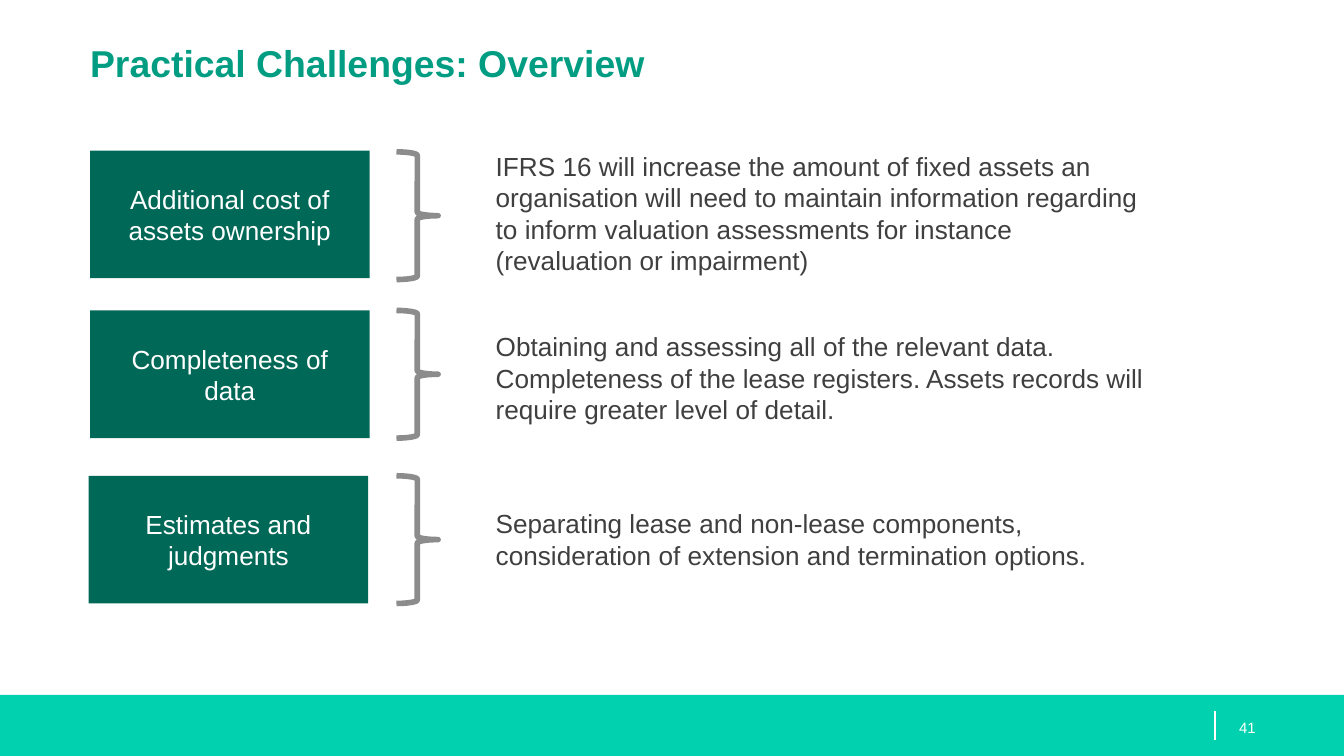
"""Build the slide on practical challenges of lease accounting."""
from lxml import etree
from pptx import Presentation
from pptx.dml.color import RGBColor
from pptx.enum import shapes as sh, text as tx
from pptx.oxml.ns import qn
from pptx.util import Inches, Pt

TITLE = "Practical Challenges: Overview"
PAGE = "41"
ROWS = [
    {"label": "Additional cost of assets ownership",
     "body": "IFRS 16 will increase the amount of fixed assets an organisation will need to "
             "maintain information regarding to inform valuation assessments for instance "
             "(revaluation or impairment)",
     "left": 0.67, "top": 1.12, "brace": 1.13, "text": (1.07, 1.04)},
    {"label": "Completeness of data",
     "body": "Obtaining and assessing all of the relevant data. Completeness of the lease "
             "registers. Assets records will require greater level of detail.",
     "left": 0.67, "top": 2.31, "brace": 2.31, "text": (2.41, 0.81)},
    {"label": "Estimates and judgments",
     "body": "Separating lease and non-lease components, consideration of extension and "
             "termination options.",
     "left": 0.66, "top": 3.54, "brace": 3.54, "text": (3.73, 0.57)},
]
WHITE = RGBColor(0xFF, 0xFF, 0xFF)
MINT = RGBColor(0x01, 0xD1, 0xAE)
TEAL = RGBColor(0x01, 0x9D, 0x82)
GREEN = RGBColor(0x00, 0x68, 0x57)
GREY = RGBColor(0x8C, 0x8C, 0x8C)
DARK = RGBColor(0x3F, 0x3F, 0x3F)
SHAPE = sh.MSO_SHAPE
TOP, MID = tx.MSO_ANCHOR.TOP, tx.MSO_ANCHOR.MIDDLE
LEFT, MIDDLE = tx.PP_ALIGN.LEFT, tx.PP_ALIGN.CENTER
WIDE = Inches(10)
HIGH = WIDE * 9 // 16


def write(shape, words, size=14, color=DARK, bold=False, align=LEFT, anchor=TOP,
          inset=(0.1, 0.05, 0.1, 0.05)):
    frame = shape.text_frame
    frame.word_wrap = True
    frame.auto_size = tx.MSO_AUTO_SIZE.NONE
    frame.vertical_anchor = anchor
    (frame.margin_left, frame.margin_top,
     frame.margin_right, frame.margin_bottom) = map(Inches, inset)
    para = frame.paragraphs[0]
    para.alignment = align
    run = para.add_run()
    run.text = words
    font = run.font
    font.name, font.size, font.bold = "Arial", Pt(size), bold
    font.color.rgb = color


def place(x, y, w, h):
    return [Inches(n) for n in (x, y, w, h)]


def draw(slide, kind, box, fill=None, line=None):
    shape = slide.shapes.add_shape(kind, *place(*box))
    shape.shadow.inherit = False
    if fill is None:
        shape.fill.background()
    else:
        shape.fill.solid()
        shape.fill.fore_color.rgb = fill
    if line is None:
        shape.line.fill.background()
    else:
        shape.line.color.rgb = line
        shape.line.width = Pt(3)
    return shape


def footer(slide):
    band = draw(slide, SHAPE.RECTANGLE, (0, 5.17, 10, 0.45), fill=MINT)
    band.height = HIGH - band.top
    rule = slide.shapes.add_connector(sh.MSO_CONNECTOR.STRAIGHT,
                                      *place(9.04, 5.29, 9.04, 5.51))
    rule.line.color.rgb = WHITE
    rule.line.width = Pt(0.75)
    etree.SubElement(rule._element.spPr, qn("a:effectLst"))
    page = slide.shapes.add_textbox(*place(9.02, 5.19, 0.75, 0.44))
    write(page, PAGE, size=8, color=WHITE, anchor=MID, inset=(0.2, 0, 0, 0))


def main():
    deck = Presentation()
    deck.slide_width, deck.slide_height = WIDE, HIGH
    slide = deck.slides.add_slide(deck.slide_layouts[5])
    title = slide.shapes.title
    title.left, title.top, title.width, title.height = place(0.67, 0.3, 8.66, 0.72)
    write(title, TITLE, size=20, color=TEAL, bold=True, inset=(0, 0, 0, 0))
    footer(slide)
    for row in ROWS:
        label = draw(slide, SHAPE.RECTANGLE, (row["left"], row["top"], 2.08, 0.95), fill=GREEN)
        write(label, row["label"], color=WHITE, align=MIDDLE, anchor=MID)
        draw(slide, SHAPE.RIGHT_BRACE, (2.95, row["brace"], 0.31, 0.95), line=GREY)
        top, high = row["text"]
        body = slide.shapes.add_textbox(*place(3.59, top, 5.07, high))
        write(body, row["body"])
    deck.save("out.pptx")


if __name__ == "__main__":
    main()
